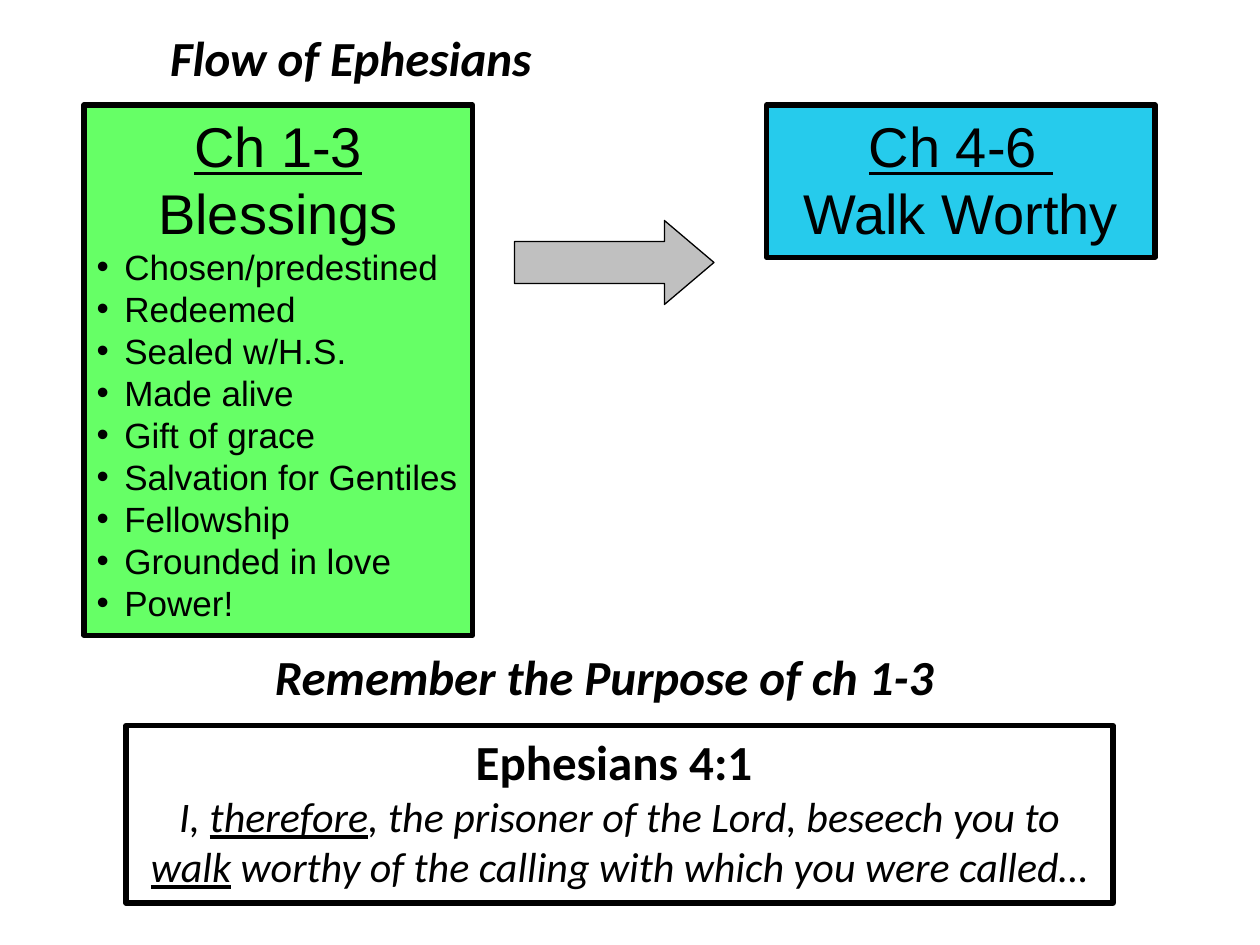
"""Build the Flow of Ephesians slide on a grid of 120 columns by 90 rows."""
from pptx import Presentation, util as u
from pptx.dml.color import RGBColor
from pptx.enum import shapes, text
from pptx.oxml.ns import qn
from lxml import etree

COLORS = {"ink": "000000", "paper": "FFFFFF", "blessings": "66FF66", "walk": "26CBEC", "arrow": "C0C0C0"}
BLESSINGS = [
    "Chosen/predestined", "Redeemed", "Sealed w/H.S.", "Made alive", "Gift of grace",
    "Salvation for Gentiles", "Fellowship", "Grounded in love", "Power!",
]

presentation = Presentation()
presentation.slide_width, presentation.slide_height = u.Inches(10), u.Inches(7.5)
column, row = presentation.slide_width / 120, presentation.slide_height / 90
slide = presentation.slides.add_slide(presentation.slide_layouts[1])


def place(shape, left, top, width, height, fill=None, line=3):
    shape.left, shape.width = int(left * column), int(width * column)
    shape.top, shape.height = int(top * row), int(height * row)
    if fill:
        shape.fill.solid()
        shape.fill.fore_color.rgb = RGBColor.from_string(COLORS[fill])
        shape.line.color.rgb = RGBColor.from_string(COLORS["ink"])
        shape.line.width = u.Pt(line)
    frame = shape.text_frame
    frame.word_wrap = True
    frame.auto_size = text.MSO_AUTO_SIZE.NONE
    frame.vertical_anchor = text.MSO_ANCHOR.TOP
    return frame


def write(frame, content, size, font="Calibri", align="LEFT", bold=False, italic=False, underlined=(), bullet=False):
    paragraph = frame.paragraphs[0] if not frame.paragraphs[0].runs else frame.add_paragraph()
    properties = paragraph._p.get_or_add_pPr()
    indent = u.Inches(0.22) if bullet else 0
    properties.set("marL", str(indent))
    properties.set("indent", str(-indent))
    if not bullet:
        etree.SubElement(properties, qn("a:buNone"))
    paragraph.alignment = text.PP_ALIGN[align]
    paragraph.space_before = u.Pt(0)
    for part in [content] if isinstance(content, str) else content:
        run = paragraph.add_run()
        run.text = part
        run.font.name, run.font.size = font, u.Pt(size)
        run.font.bold, run.font.italic = bold, italic
        run.font.underline = part in underlined
        run.font.color.rgb = RGBColor.from_string(COLORS["ink"])


title = place(slide.shapes.title, 15, 2, 84, 6.8)
write(title, "Flow of Ephesians", 28, bold=True, italic=True)

blessings = place(slide.placeholders[1], 8, 10, 37, 50.5, "blessings")
walk_shape = slide.shapes.add_shape(shapes.MSO_SHAPE.RECTANGLE, 0, 0, 0, 0)
walk = place(walk_shape, 73, 10, 37, 14.5, "walk")
for frame, chapters, theme in [(blessings, "Ch 1-3", "Blessings"), (walk, "Ch 4-6 ", "Walk Worthy")]:
    write(frame, chapters, 32, font="Arial", align="CENTER", underlined=[chapters])
    write(frame, theme, 32, font="Arial", align="CENTER")
for blessing in BLESSINGS:
    write(blessings, blessing, 20, font="Arial", bullet=True)

arrow = slide.shapes.add_shape(shapes.MSO_SHAPE.RIGHT_ARROW, 0, 0, 0, 0)
place(arrow, 49, 21, 19, 8, "arrow", line=0.75)
arrow.adjustments[0], arrow.adjustments[1] = 0.5, 0.59

reminder = place(slide.shapes.add_textbox(0, 0, 0, 0), 25, 61, 84, 6.8)
write(reminder, "Remember the Purpose of ch 1-3", 28, bold=True, italic=True)

verse_shape = slide.shapes.add_shape(shapes.MSO_SHAPE.RECTANGLE, 0, 0, 0, 0)
verse = place(verse_shape, 12, 69.1, 94, 16.9, "paper")
write(verse, "Ephesians 4:1 ", 28, align="CENTER", bold=True)
write(
    verse,
    ["I, ", "therefore", ", the prisoner of the Lord, beseech you to ", "walk",
     " worthy of the calling with which you were called…"],
    24, align="CENTER", italic=True, underlined=["therefore", "walk"],
)

for shape in (walk_shape, arrow, verse_shape):
    shape.shadow.inherit = False

presentation.save("out.pptx")
